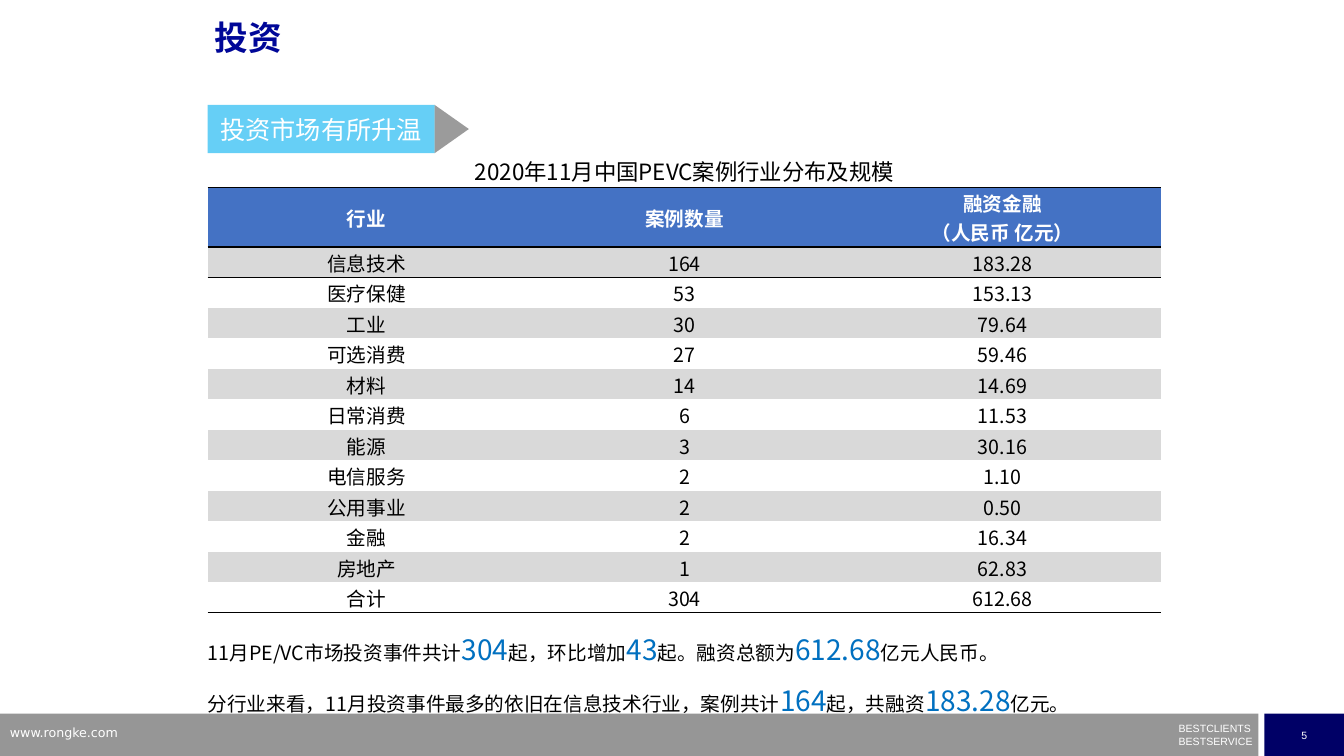
from pptx import Presentation
from pptx.dml.color import RGBColor
from pptx.enum.shapes import MSO_SHAPE
from pptx.enum.text import MSO_ANCHOR, MSO_AUTO_SIZE, PP_ALIGN
from pptx.oxml.ns import qn
from pptx.util import Inches, Pt
from lxml.etree import SubElement

COLORS = {
    "white": "FFFFFF", "black": "000000", "title": "000798", "number": "0070C0",
    "footer": "969696", "page": "000066", "label": "00B0F0", "arrow": "595959",
    "header": "4472C4", "band": "D9D9D9",
}
CJK = "Noto Sans CJK SC"
NO_STYLE = "{2D5ABB26-0587-4C30-8999-92F81FD0307C}"
HEADER = ["行业", "案例数量", "融资金融\v（人民币 亿元）"]
CASES = [
    ("信息技术", "164", "183.28"),
    ("医疗保健", "53", "153.13"),
    ("工业", "30", "79.64"),
    ("可选消费", "27", "59.46"),
    ("材料", "14", "14.69"),
    ("日常消费", "6", "11.53"),
    ("能源", "3", "30.16"),
    ("电信服务", "2", "1.10"),
    ("公用事业", "2", "0.50"),
    ("金融", "2", "16.34"),
    ("房地产", "1", "62.83"),
    ("合计", "304", "612.68"),
]
SUMMARY = [
    "11月PE/VC市场投资事件共计|304|起，环比增加|43|起。融资总额为|612.68|亿元人民币。",
    "分行业来看，11月投资事件最多的依旧在信息技术行业，案例共计|164|起，共融资|183.28|亿元。",
]


def set_attrs(obj, **values):
    for name, value in values.items():
        setattr(obj, name, value)


def rgb(name):
    return RGBColor.from_string(COLORS[name])


def style_runs(p, size, color, font=CJK, bold=False):
    for r in p.runs:
        set_attrs(r.font, size=Pt(size), name=font, bold=bold)
        r.font.color.rgb = rgb(color)
        SubElement(r.font._element, qn("a:ea"), typeface=CJK)


def write(tf, text, size, color, font=CJK, bold=False, align=PP_ALIGN.LEFT, **frame):
    set_attrs(tf, **{"word_wrap": True, **frame})
    p = tf.paragraphs[0]
    p.text = text
    p.alignment = align
    style_runs(p, size, color, font, bold)
    return p


def margins(left, top, right, bottom):
    return {"margin_left": Inches(left), "margin_top": Inches(top),
            "margin_right": Inches(right), "margin_bottom": Inches(bottom)}


def add_block(shapes, kind, box, color, alpha=None):
    sp = shapes.add_shape(kind, *map(Inches, box))
    sp.shadow.inherit = False
    sp.fill.solid()
    sp.fill.fore_color.rgb = rgb(color)
    sp.line.fill.background()
    if alpha:
        clr = sp._element.spPr.find(qn("a:solidFill"))[0]
        SubElement(clr, qn("a:alpha"), val=str(alpha * 1000))
    return sp


def add_text_box(s, box):
    return s.shapes.add_textbox(*map(Inches, box)).text_frame


def add_footer(s, x, y, w, h):
    page_w = 0.79
    bar_w = w - page_w - 0.06
    add_block(s.shapes, MSO_SHAPE.RECTANGLE, (x, y, bar_w, h), "footer")
    page = add_block(s.shapes, MSO_SHAPE.RECTANGLE, (x + w - page_w, y, page_w, h), "page")
    write(page.text_frame, "5", 7.5, "white", "Arial", align=PP_ALIGN.CENTER,
          vertical_anchor=MSO_ANCHOR.MIDDLE, word_wrap=False)
    tf = add_text_box(s, (x + bar_w - 0.79, y + 0.14, 0.76, 0.2))
    first = write(tf, "BESTCLIENTS", 7.5, "white", "Arial", **margins(0, 0, 0, 0))
    second = tf.add_paragraph()
    second.text = "BESTSERVICE"
    style_runs(second, 7.5, "white", "Arial")
    first.line_spacing = second.line_spacing = 0.5
    second.space_before = Pt(4.3)
    write(add_text_box(s, (x, y + 0.06, 3.2, 0.26)), "www.rongke.com", 9, "white", "DejaVu Sans")


def add_title(s, x, y, w, h):
    title = s.shapes.title
    set_attrs(title, left=Inches(x), top=Inches(y), width=Inches(w), height=Inches(h))
    p = write(title.text_frame, "投资", 24, "title", "Arial", True,
              vertical_anchor=MSO_ANCHOR.TOP, auto_size=MSO_AUTO_SIZE.NONE)
    p.line_spacing = 0.9


def add_heading(s, x, y, w, h):
    arrow_h = 0.34
    group = s.shapes.add_group_shape()
    label = add_block(group.shapes, MSO_SHAPE.RECTANGLE, (x, y, w, h), "label", 60)
    write(label.text_frame, "投资市场有所升温", 18, "white", align=PP_ALIGN.CENTER,
          vertical_anchor=MSO_ANCHOR.MIDDLE)
    arrow = add_block(group.shapes, MSO_SHAPE.ISOSCELES_TRIANGLE,
                      (x + w + (arrow_h - h) / 2, y + (h - arrow_h) / 2, h, arrow_h), "arrow", 60)
    arrow.rotation = 90


def add_summary(s, x, y, w, h):
    tf = add_text_box(s, (x, y, w, h))
    set_attrs(tf, word_wrap=True, **margins(0, 0, 0, 0))
    for i, sentence in enumerate(SUMMARY):
        p = tf.add_paragraph() if i else tf.paragraphs[0]
        set_attrs(p, alignment=PP_ALIGN.JUSTIFY, line_spacing=1.5)
        for j, part in enumerate(sentence.split("|")):
            r = p.add_run()
            r.text = part
            set_attrs(r.font, size=Pt(20 if j % 2 else 14), name=CJK)
            r.font.color.rgb = rgb("number" if j % 2 else "black")
            SubElement(r.font._element, qn("a:ea"), typeface=CJK)


def add_borders(cell, sides):
    for side in sides:
        ln = SubElement(cell._tc.get_or_add_tcPr(), qn(f"a:ln{side}"), w=str(Pt(1)))
        SubElement(SubElement(ln, qn("a:solidFill")), qn("a:srgbClr"), val=COLORS["black"])


def fill_cell(cell, text, size, color, fill=None, bold=False, sides=""):
    set_attrs(cell, vertical_anchor=MSO_ANCHOR.MIDDLE, **margins(0.01, 0.01, 0.01, 0))
    write(cell.text_frame, text, size, color, bold=bold, align=PP_ALIGN.CENTER)
    add_borders(cell, sides)
    if fill:
        cell.fill.solid()
        cell.fill.fore_color.rgb = rgb(fill)
    else:
        cell.fill.background()


def add_case_table(s, x, y, w, h):
    caption_h, header_h = 0.34, 0.59
    row_h = (h - caption_h - header_h) / len(CASES)
    frame = s.shapes.add_table(len(CASES) + 2, len(HEADER), *map(Inches, (x, y, w, h)))
    table = frame.table
    table._tbl.tblPr.find(qn("a:tableStyleId")).text = NO_STYLE
    set_attrs(table, first_row=False, horz_banding=False)
    for row, height in zip(table.rows, [caption_h, header_h] + [row_h] * len(CASES)):
        row.height = Inches(height)
    table.cell(0, 0).merge(table.cell(0, len(HEADER) - 1))
    fill_cell(table.cell(0, 0), "2020年11月中国PEVC案例行业分布及规模", 16, "black", sides="B")
    for col, text in enumerate(HEADER):
        fill_cell(table.cell(1, col), text, 14, "white", "header", True, "TB")
    for i, case in enumerate(CASES):
        sides = "T" if i == 0 else "B" if i == len(CASES) - 1 else ""
        for col, text in enumerate(case):
            fill_cell(table.cell(i + 2, col), text, 14, "black", None if i % 2 else "band", sides=sides)


def main():
    prs = Presentation()
    set_attrs(prs, slide_width=Inches(13.33), slide_height=Inches(7.5))
    s = prs.slides.add_slide(prs.slide_layouts[5])
    add_footer(s, 0, 7.08, 13.33, 0.42)
    add_heading(s, 2.06, 1.04, 2.25, 0.48)
    add_summary(s, 2.06, 6.11, 9.46, 0.95)
    add_title(s, 2.03, 0.16, 9, 0.7)
    add_case_table(s, 2.06, 1.52, 9.46, 4.56)
    prs.save("out.pptx")


if __name__ == "__main__":
    main()
